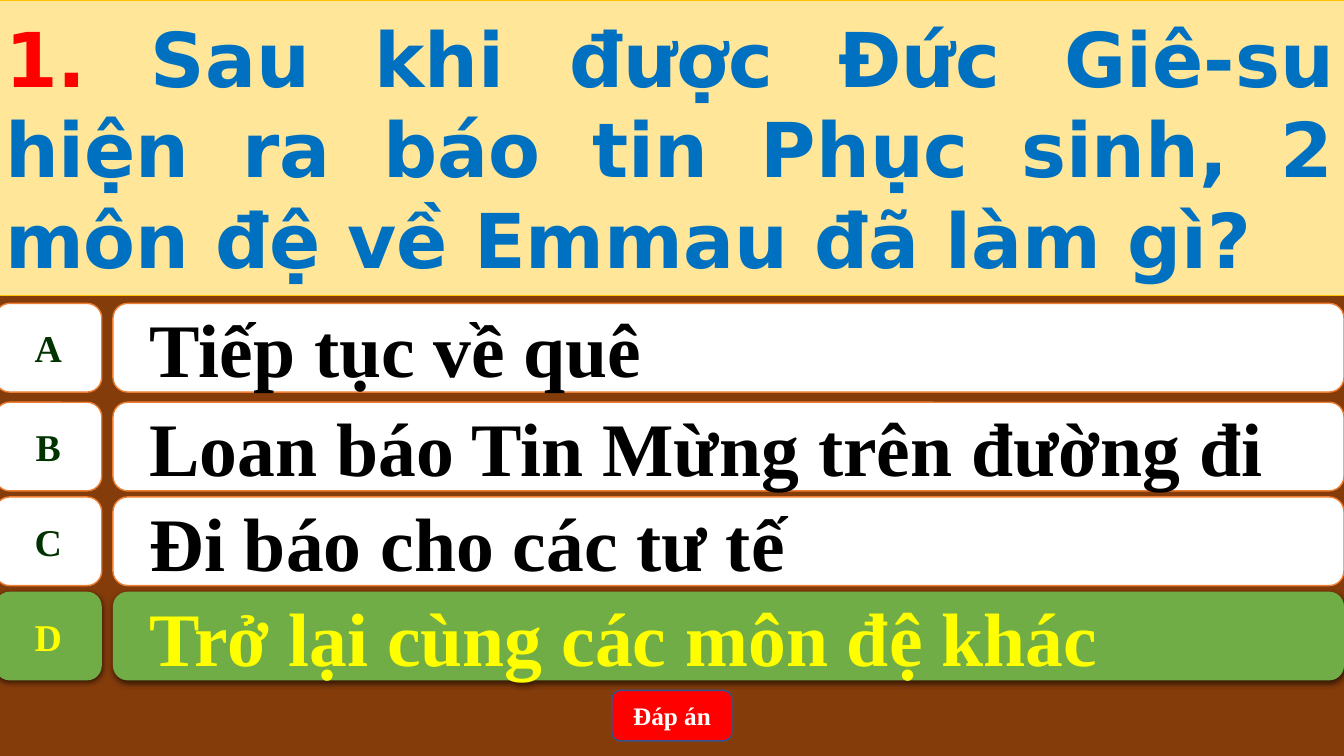
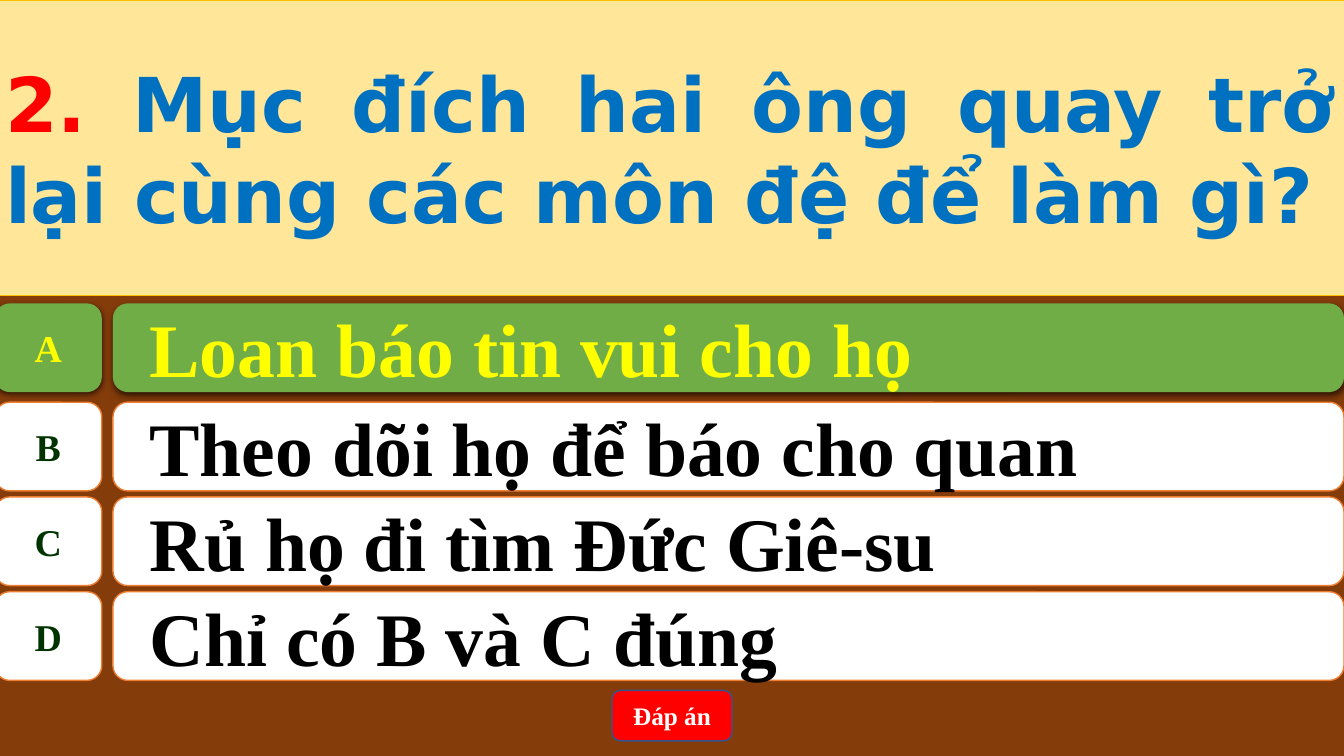
from dataclasses import dataclass

from lxml import etree
from pptx import Presentation
from pptx.dml.color import RGBColor
from pptx.enum.shapes import MSO_SHAPE
from pptx.enum.text import MSO_ANCHOR, MSO_AUTO_SIZE, PP_ALIGN
from pptx.oxml.ns import qn
from pptx.shapes.autoshape import Shape
from pptx.slide import Slide, SlideLayout
from pptx.util import Inches, Pt

# Enum members
ROUNDED = MSO_SHAPE.ROUNDED_RECTANGLE
LETTER_BOX = MSO_SHAPE.FLOWCHART_ALTERNATE_PROCESS
MIDDLE = MSO_ANCHOR.MIDDLE
LEFT, CENTER, JUSTIFY = PP_ALIGN.LEFT, PP_ALIGN.CENTER, PP_ALIGN.JUSTIFY

# Colours
BROWN = RGBColor(0x84, 0x3C, 0x0B)
CREAM = RGBColor(0xFF, 0xE6, 0x99)
GOLD = RGBColor(0xFF, 0xC0, 0x00)
RED = RGBColor(0xFF, 0x00, 0x00)
BLUE = RGBColor(0x00, 0x70, 0xC0)
NAVY = RGBColor(0x32, 0x54, 0x91)
WHITE = RGBColor(0xFF, 0xFF, 0xFF)
BLACK = RGBColor(0x00, 0x00, 0x00)
ORANGE = RGBColor(0xED, 0x7D, 0x31)
DARK_GREEN = RGBColor(0x00, 0x33, 0x00)
GREEN = RGBColor(0x70, 0xAD, 0x47)
YELLOW = RGBColor(0xFF, 0xFF, 0x00)

# Fonts and layout
QUESTION_FONT = "DejaVu Sans"
ANSWER_FONT = "Times New Roman"
SLIDE_W, SLIDE_H = Inches(13.33), Inches(7.5)
EDGE = Inches(-0.05)
QUESTION_W, QUESTION_H = Inches(13.39), Inches(2.93)
LETTER_W = Inches(1.06)
ANSWER_X, ANSWER_W = Inches(1.12), Inches(12.21)
ANSWER_INDENT = Inches(0.32)
ROW_TOPS = (Inches(3.01), Inches(3.99), Inches(4.93), Inches(5.87))
ROW_H = Inches(0.88)
LETTERS = "ABCD"


@dataclass(frozen=True)
class Quiz:
    number: str
    question: str
    answers: tuple[str, str, str, str]
    correct: str


@dataclass(frozen=True)
class BoxStyle:
    fill: RGBColor
    line: RGBColor | None
    shadow: bool = False


PLAIN = BoxStyle(WHITE, ORANGE)
CORRECT = BoxStyle(GREEN, None, shadow=True)
BUTTON = BoxStyle(RED, NAVY)

QUIZZES = (
    Quiz(
        "1. ",
        "Sau khi được Đức Giê-su hiện ra báo tin Phục sinh, 2 môn đệ về Emmau đã làm gì?",
        (
            "Tiếp tục về quê",
            "Loan báo Tin Mừng trên đường đi",
            "Đi báo cho các tư tế",
            "Trở lại cùng các môn đệ khác",
        ),
        "D",
    ),
    Quiz(
        "2. ",
        "Mục đích hai ông quay trở lại cùng các môn đệ để làm gì?",
        (
            "Loan báo tin vui cho họ",
            "Theo dõi họ để báo cho quan",
            "Rủ họ đi tìm Đức Giê-su",
            "Chỉ có B và C đúng",
        ),
        "A",
    ),
)


def add_soft_shadow(shape: Shape) -> None:
    """Cast a soft black shadow straight down."""
    effects = shape._element.spPr.find(qn("a:effectLst"))
    shadow = etree.SubElement(
        effects, qn("a:outerShdw"),
        blurRad=str(Pt(4.5)), dist=str(Pt(1.5)), dir="5400000", rotWithShape="0",
    )
    color = etree.SubElement(shadow, qn("a:srgbClr"), val=str(BLACK))
    etree.SubElement(color, qn("a:alpha"), val="63000")


def add_box(slide: Slide, kind: MSO_SHAPE, left: int, top: int, width: int, height: int,
            style: BoxStyle, text: str, size: int, color: RGBColor,
            align: PP_ALIGN = CENTER) -> Shape:
    """Draw a filled box with one line of bold text."""
    box = slide.shapes.add_shape(kind, left, top, width, height)
    box.fill.solid()
    box.fill.fore_color.rgb = style.fill
    if style.line is None:
        box.line.fill.background()
    else:
        box.line.color.rgb = style.line
        box.line.width = Pt(1)
    box.shadow.inherit = False
    if style.shadow:
        add_soft_shadow(box)

    frame = box.text_frame
    frame.vertical_anchor = MIDDLE
    paragraph = frame.paragraphs[0]
    paragraph.text = text
    paragraph.alignment = align
    font = paragraph.font
    font.name, font.size, font.bold = ANSWER_FONT, Pt(size), True
    font.color.rgb = color
    return box


def fill_question(slide: Slide, quiz: Quiz) -> None:
    """Turn the title placeholder into the question band."""
    band = slide.shapes.title
    band.left, band.top, band.width, band.height = EDGE, 0, QUESTION_W, QUESTION_H
    band.fill.solid()
    band.fill.fore_color.rgb = CREAM
    band.line.color.rgb = GOLD
    band.line.width = Pt(0.5)

    frame = band.text_frame
    frame.auto_size = MSO_AUTO_SIZE.NONE
    frame.word_wrap = True
    frame.vertical_anchor = MIDDLE
    paragraph = frame.paragraphs[0]
    paragraph.alignment = JUSTIFY
    font = paragraph.font
    font.name, font.size, font.bold = QUESTION_FONT, Pt(54), True
    for text, color in ((quiz.number, RED), (quiz.question, BLUE)):
        run = paragraph.add_run()
        run.text = text
        run.font.color.rgb = color


def add_answer(slide: Slide, letter: str, answer: str, top: int, is_correct: bool) -> None:
    """Draw one row: the letter box and the answer bar."""
    style = CORRECT if is_correct else PLAIN
    letter_box = add_box(slide, LETTER_BOX, EDGE, top, LETTER_W, ROW_H, style,
                         letter, 27, YELLOW if is_correct else DARK_GREEN)
    letter_box.text_frame.word_wrap = False
    answer_bar = add_box(slide, ROUNDED, ANSWER_X, top, ANSWER_W, ROW_H, style,
                         answer, 54, YELLOW if is_correct else BLACK, LEFT)
    answer_bar.text_frame.margin_left = ANSWER_INDENT


def build_quiz_slide(prs: Presentation, layout: SlideLayout, quiz: Quiz) -> None:
    slide = prs.slides.add_slide(layout)
    fill_question(slide, quiz)
    for letter, answer, top in zip(LETTERS, quiz.answers, ROW_TOPS):
        add_answer(slide, letter, answer, top, letter == quiz.correct)
    add_box(slide, ROUNDED, Inches(6.07), Inches(6.85), Inches(1.19), Inches(0.5),
            BUTTON, "Đáp án", 18, WHITE)


def main() -> None:
    prs = Presentation()
    prs.slide_width, prs.slide_height = SLIDE_W, SLIDE_H
    # Shared brown background on the title-only layout
    layout = prs.slide_layouts[5]
    layout.background.fill.solid()
    layout.background.fill.fore_color.rgb = BROWN
    for quiz in QUIZZES:
        build_quiz_slide(prs, layout, quiz)
    prs.save("out.pptx")


if __name__ == "__main__":
    main()
